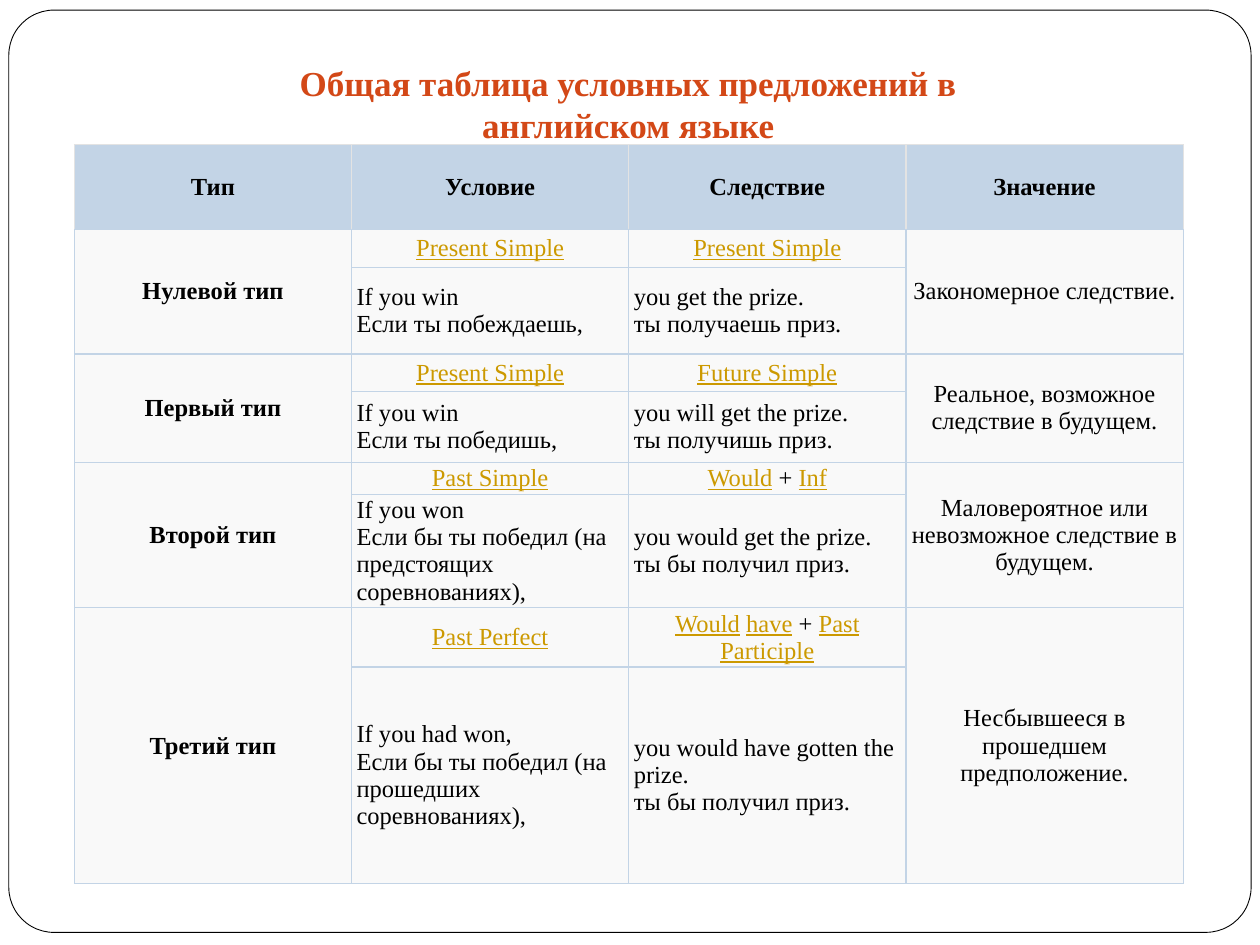
from itertools import product

from lxml import etree
from pptx import Presentation
from pptx.dml.color import RGBColor
from pptx.enum.shapes import MSO_SHAPE
from pptx.enum.text import MSO_ANCHOR, MSO_AUTO_SIZE, PP_ALIGN
from pptx.oxml.ns import qn
from pptx.util import Inches, Pt

LEFT, CENTER = PP_ALIGN.LEFT, PP_ALIGN.CENTER
MIDDLE = MSO_ANCHOR.MIDDLE
ROUNDED = MSO_SHAPE.ROUNDED_RECTANGLE
GROW = MSO_AUTO_SIZE.SHAPE_TO_FIT_TEXT

FONT = "Times New Roman"
WHITE = RGBColor(0xFF, 0xFF, 0xFF)
BLACK = RGBColor(0x00, 0x00, 0x00)
ORANGE = RGBColor(0xD3, 0x48, 0x17)
GOLD = RGBColor(0xCC, 0x99, 0x00)
BLUE = RGBColor(0xC3, 0xD4, 0xE6)
GRAY = RGBColor(0xE3, 0xE3, 0xE3)
PALE = RGBColor(0xF9, 0xF9, 0xF9)

# Content: text in square brackets is an underlined term
TITLE = [("Общая таблица условных предложений в", LEFT), ("английском языке", CENTER)]
HEADERS = ["Тип", "Условие", "Следствие", "Значение"]
TYPES = [
    {"name": "Нулевой тип", "meaning": "Закономерное следствие.",
     "forms": ["[Present Simple]", "[Present Simple]"],
     "examples": ["If you win\nЕсли ты побеждаешь,",
                  "you get the prize.\nты получаешь приз."]},
    {"name": "Первый тип", "meaning": "Реальное, возможное следствие в будущем.",
     "forms": ["[Present Simple]", "[Future Simple]"],
     "examples": ["If you win\nЕсли ты победишь,",
                  "you will get the prize.\nты получишь приз."]},
    {"name": "Второй тип", "meaning": "Маловероятное или невозможное следствие в будущем.",
     "forms": ["[Past Simple]", "[Would] + [Inf]"],
     "examples": ["If you won\nЕсли бы ты победил (на предстоящих соревнованиях),",
                  "you would get the prize.\nты бы получил приз."]},
    {"name": "Третий тип", "meaning": "Несбывшееся в прошедшем предположение.",
     "forms": ["[Past Perfect]", "[Would] [have] + [Past Participle]"],
     "examples": ["If you had won,\nЕсли бы ты победил (на прошедших соревнованиях),",
                  "you would have gotten the prize.\nты бы получил приз."]},
]
ROW_HEIGHTS = [0.67, 0.3, 0.69, 0.3, 0.56, 0.17, 0.81, 0.3, 1.72]
COLUMN_WIDTH = 2.2


def set_all(target, values):
    for name, value in values.items():
        setattr(target, name, value)


def add_span(para, text, size, color, **style):
    span = para.add_run()
    span.text = text
    set_all(span.font, {"name": FONT, "size": Pt(size), **style})
    span.font.color.rgb = color


def set_borders(cell, colors):
    props = cell._tc.get_or_add_tcPr()
    for position, (side, color) in enumerate(zip("LRTB", colors)):
        line = etree.Element(qn(f"a:ln{side}"), w=str(Pt(0.75)))
        fill = etree.SubElement(line, qn("a:solidFill"))
        etree.SubElement(fill, qn("a:srgbClr"), val=str(color))
        props.insert(position, line)


def fill_cell(cell, text, align=CENTER, bold=False):
    for para_index, line in enumerate(text.split("\n")):
        frame = cell.text_frame
        para = frame.add_paragraph() if para_index else frame.paragraphs[0]
        para.alignment = align
        # Odd parts lie between brackets
        for index, part in enumerate(line.replace("]", "[").split("[")):
            if part:
                term = index % 2 == 1
                add_span(para, part, 14, GOLD if term else BLACK, bold=bold, underline=term)


deck = Presentation()
set_all(deck, {"slide_width": Inches(10), "slide_height": Inches(7.5)})
page = deck.slides.add_slide(deck.slide_layouts[6])

# Rounded page frame
border = page.shapes.add_shape(ROUNDED, Inches(0.07), Inches(0.08), Inches(9.86), Inches(7.32))
border.adjustments[0] = 0.049
border.shadow.inherit = False
border.fill.solid()
border.fill.fore_color.rgb = WHITE
border.line.color.rgb = BLACK
border.line.width = Pt(0.5)

# Table grid
holder = page.shapes.add_table(len(ROW_HEIGHTS), len(HEADERS), Inches(0.59), Inches(1.15),
                               Inches(COLUMN_WIDTH * len(HEADERS)), Inches(5.8))
table = holder.table
set_all(table, {"first_row": False, "horz_banding": False})
for column in table.columns:
    column.width = Inches(COLUMN_WIDTH)
for row, height in zip(table.rows, ROW_HEIGHTS):
    row.height = Inches(height)
holder.height = Inches(5.8)
for row, column in product(range(len(ROW_HEIGHTS)), range(len(HEADERS))):
    cell = table.cell(row, column)
    set_all(cell, {"vertical_anchor": MIDDLE,
                   "margin_left": Inches(0.04), "margin_right": Inches(0.04),
                   "margin_top": Inches(0.02), "margin_bottom": Inches(0.02)})
    cell.fill.solid()
    cell.fill.fore_color.rgb = PALE if row else BLUE
    set_borders(cell, [BLUE] * 4 if row else [GRAY, GRAY, GRAY, BLUE])

# Table text: each type takes two rows, its outer cells span both
for column, header in enumerate(HEADERS):
    fill_cell(table.cell(0, column), header, bold=True)
for index, kind in enumerate(TYPES):
    top = 1 + 2 * index
    for column in (0, 3):
        table.cell(top, column).merge(table.cell(top + 1, column))
    fill_cell(table.cell(top, 0), kind["name"], bold=True)
    fill_cell(table.cell(top, 3), kind["meaning"])
    for column, (form, example) in enumerate(zip(kind["forms"], kind["examples"]), 1):
        fill_cell(table.cell(top, column), form)
        fill_cell(table.cell(top + 1, column), example, LEFT)

# Title
box = page.shapes.add_textbox(Inches(2.28), Inches(0.44), Inches(5.52), Inches(0.77))
set_all(box.text_frame, {"word_wrap": False, "auto_size": GROW})
for index, (text, align) in enumerate(TITLE):
    para = box.text_frame.add_paragraph() if index else box.text_frame.paragraphs[0]
    para.alignment = align
    add_span(para, text, 20, ORANGE, bold=True)

deck.save("out.pptx")
